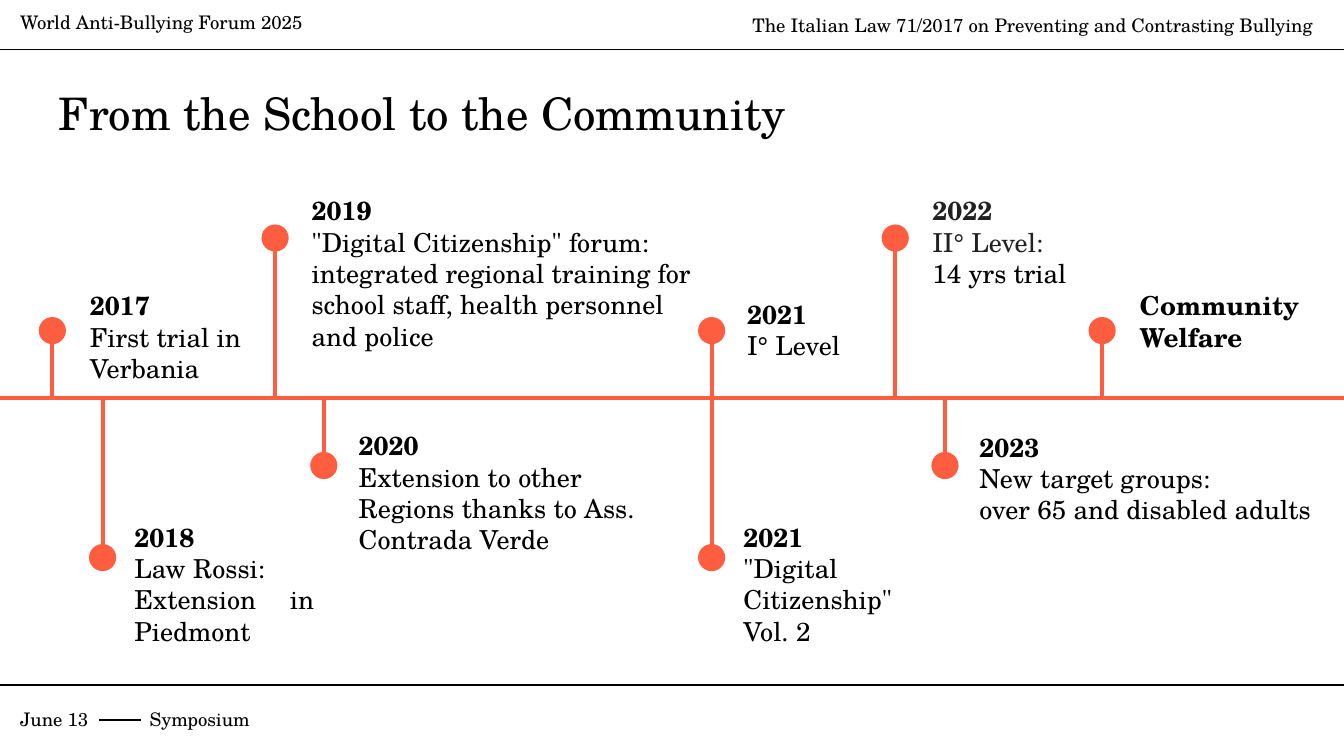
"""Build the timeline slide about extending a school project to the community."""
from dataclasses import dataclass

from lxml import etree
from pptx import Presentation
from pptx.dml.color import RGBColor
from pptx.enum.shapes import MSO_CONNECTOR, MSO_SHAPE
from pptx.enum.text import MSO_ANCHOR, MSO_AUTO_SIZE, PP_ALIGN
from pptx.oxml.ns import qn
from pptx.util import Cm, Pt

STRAIGHT = MSO_CONNECTOR.STRAIGHT
OVAL = MSO_SHAPE.OVAL
TOP = MSO_ANCHOR.TOP
NO_AUTOFIT = MSO_AUTO_SIZE.NONE
LEFT, RIGHT, JUSTIFY = PP_ALIGN.LEFT, PP_ALIGN.RIGHT, PP_ALIGN.JUSTIFY

BLACK = RGBColor(0x00, 0x00, 0x00)
GREY = RGBColor(0x21, 0x21, 0x21)
CORAL = RGBColor(0xFF, 0x5D, 0x40)

FONT = "TeX Gyre Schola"
SLIDE_WIDTH, SLIDE_HEIGHT = 25.4, 14.29
AXIS_Y = 7.52
DOT_SIZE = 0.46
HIGH, LOW, BELOW_NEAR, BELOW_FAR = 4.5, 6.25, 8.8, 10.54
WIDE_INSET = (0.25, 0.25)
TIGHT_INSET = (0.18, 0.1)


@dataclass
class Milestone:
    """One point on the timeline with its label."""

    lines: tuple
    dot: tuple
    label_box: tuple
    inset: tuple = TIGHT_INSET
    bold_count: int = 1
    grey_count: int = 0
    align: PP_ALIGN = LEFT


MILESTONES = (
    Milestone(("2017", "First trial in Verbania"),
              (0.99, LOW), (1.52, 5.38, 3.33, 1.98)),
    Milestone(("2018", "Law Rossi:", "Extension in Piedmont"),
              (1.94, BELOW_FAR), (2.36, 9.75, 3.76, 2.59), align=JUSTIFY),
    Milestone(("2019", "\"Digital Citizenship\" forum: integrated regional training "
                       "for school staff, health personnel and police"),
              (5.2, HIGH), (5.64, 3.43, 8.1, 1.37), WIDE_INSET),
    Milestone(("2020", "Extension to other Regions thanks to Ass. Contrada Verde"),
              (6.12, BELOW_NEAR), (6.53, 7.87, 5.74, 2.92), WIDE_INSET),
    Milestone(("2021", "I° Level"),
              (13.45, LOW), (13.94, 5.54, 3.33, 1.4)),
    Milestone(("2021", "\"Digital Citizenship\" Vol. 2"),
              (13.45, BELOW_FAR), (13.87, 9.75, 3.76, 2.59)),
    Milestone(("2022", "II° Level:", "14 yrs trial"),
              (16.92, HIGH), (17.37, 3.43, 4.27, 1.37), WIDE_INSET, grey_count=2),
    Milestone(("2023", "New target groups:", "over 65 and disabled adults"),
              (17.86, BELOW_NEAR), (18.26, 7.9, 7.34, 2.92), WIDE_INSET),
    Milestone(("Community", "Welfare"),
              (20.83, LOW), (21.36, 5.38, 4.04, 1.4), bold_count=2),
)


def add_line(slide, start, end, color=BLACK, width=0.75):
    """Draw a straight line without a shadow."""
    line = slide.shapes.add_connector(STRAIGHT, *map(Cm, start + end))
    line.line.color.rgb = color
    line.line.width = Pt(width)
    etree.SubElement(line._element.spPr, qn("a:effectLst"))


def prepare_frame(frame, inset):
    """Set wrapping, anchor and margins of a text frame."""
    frame.word_wrap = True
    frame.auto_size = NO_AUTOFIT
    frame.vertical_anchor = TOP
    frame.margin_left = frame.margin_right = Cm(inset[0])
    frame.margin_top = frame.margin_bottom = Cm(inset[1])


def add_run(paragraph, text, size, color=BLACK, bold=False):
    """Append a formatted run."""
    run = paragraph.add_run()
    run.text = text
    run.font.name = FONT
    run.font.size = Pt(size)
    run.font.bold = bold
    run.font.color.rgb = color


def add_title(slide, text):
    """Place and fill the title placeholder."""
    title = slide.shapes.title
    title.left, title.top, title.width, title.height = map(Cm, (0.86, 1.37, 23.67, 1.65))
    prepare_frame(title.text_frame, WIDE_INSET)
    paragraph = title.text_frame.paragraphs[0]
    paragraph.alignment = LEFT
    add_run(paragraph, text, 24)


def add_caption(slide, text, box, align=LEFT, spacing=1.0):
    """Add a small header or footer text."""
    frame = slide.shapes.add_textbox(*map(Cm, box)).text_frame
    prepare_frame(frame, WIDE_INSET)
    paragraph = frame.paragraphs[0]
    paragraph.alignment = align
    paragraph.line_spacing = spacing
    add_run(paragraph, text, 10)


def add_milestone(slide, milestone):
    """Draw the stem, dot and label of a milestone."""
    x, y = milestone.dot
    add_line(slide, (x, y), (x, AXIS_Y), CORAL, 2.25)
    dot = slide.shapes.add_shape(
        OVAL, Cm(x - DOT_SIZE / 2), Cm(y - DOT_SIZE / 2), Cm(DOT_SIZE), Cm(DOT_SIZE))
    dot.shadow.inherit = False
    dot.fill.solid()
    dot.fill.fore_color.rgb = CORAL
    dot.line.color.rgb = CORAL
    dot.line.width = Pt(1.5)

    frame = slide.shapes.add_textbox(*map(Cm, milestone.label_box)).text_frame
    prepare_frame(frame, milestone.inset)
    for index, text in enumerate(milestone.lines):
        paragraph = frame.add_paragraph() if index else frame.paragraphs[0]
        paragraph.alignment = milestone.align
        color = GREY if index < milestone.grey_count else BLACK
        add_run(paragraph, text, 14, color, index < milestone.bold_count)


def add_header_and_footer(slide):
    """Add the page rules with the texts above and below them."""
    for y in (0.94, 12.95):
        add_line(slide, (0, y), (SLIDE_WIDTH, y))
    add_caption(slide, "World Anti-Bullying Forum 2025", (0.13, 0, 7.7, 0.41))
    add_caption(slide, "The Italian Law 71/2017 on Preventing and Contrasting Bullying",
                (13.06, 0, 11.99, 0.41), RIGHT, 1.15)
    add_caption(slide, "June 13", (0.13, 13.13, 2, 0.76))
    add_line(slide, (1.88, 13.61), (2.67, 13.61))
    add_caption(slide, "Symposium", (2.58, 13.13, 3.06, 0.76))


def main():
    """Create and save the presentation."""
    presentation = Presentation()
    presentation.slide_width = Cm(SLIDE_WIDTH)
    presentation.slide_height = Cm(SLIDE_HEIGHT)
    slide = presentation.slides.add_slide(presentation.slide_layouts[5])
    add_header_and_footer(slide)
    add_title(slide, "From the School to the Community")
    add_line(slide, (0, AXIS_Y), (SLIDE_WIDTH, AXIS_Y), CORAL, 2.25)
    for milestone in MILESTONES:
        add_milestone(slide, milestone)
    presentation.save("out.pptx")


if __name__ == "__main__":
    main()
